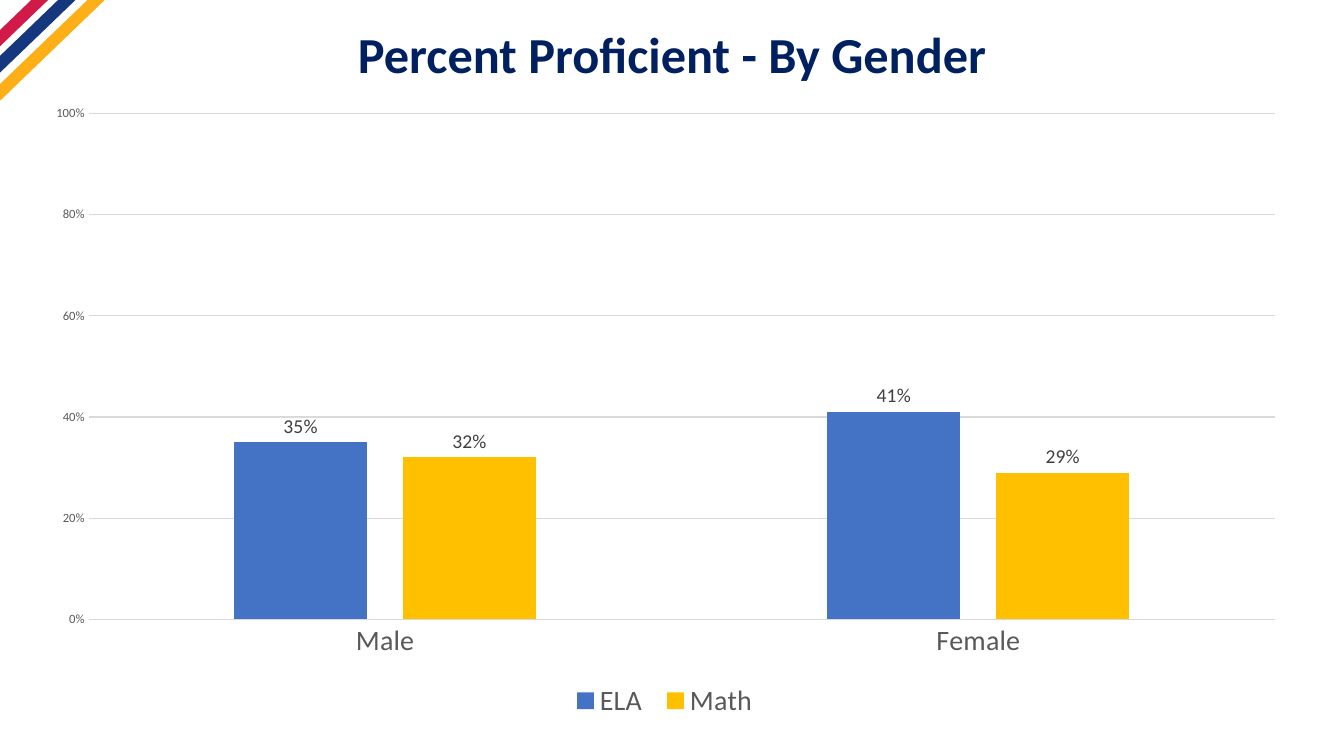
from dataclasses import dataclass

from lxml import etree
from pptx import Presentation
from pptx.chart.data import CategoryChartData
from pptx.dml.color import RGBColor
from pptx.enum.chart import XL_CHART_TYPE, XL_LABEL_POSITION, XL_LEGEND_POSITION, XL_TICK_MARK
from pptx.enum.shapes import MSO_SHAPE
from pptx.enum.text import MSO_ANCHOR, PP_ALIGN
from pptx.oxml.ns import qn
from pptx.util import Cm, Pt

STRIPE = MSO_SHAPE.DIAGONAL_STRIPE
COLUMNS = XL_CHART_TYPE.COLUMN_CLUSTERED
OUTSIDE_END = XL_LABEL_POSITION.OUTSIDE_END
BOTTOM = XL_LEGEND_POSITION.BOTTOM
NO_TICK = XL_TICK_MARK.NONE
MIDDLE, CENTER = MSO_ANCHOR.MIDDLE, PP_ALIGN.CENTER
TITLE_ONLY = 5


@dataclass(frozen=True)
class Theme:
    font: str = "Calibri"
    red: str = "D11A47"
    blue: str = "14377D"
    gold: str = "FCAF17"
    title: str = "002060"
    grid: str = "D9D9D9"
    axis_text: str = "595959"
    label_text: str = "404040"
    ela: str = "4472C4"
    math: str = "FFC000"
    title_size: int = 36
    category_size: int = 20
    label_size: int = 14
    value_size: int = 9


THEME = Theme()


def set_font(font, size, color, bold=False):
    values = {"name": THEME.font, "size": Pt(size), "bold": bold}
    for name, value in values.items():
        setattr(font, name, value)
    font.color.rgb = RGBColor.from_string(color)


def set_line(line, color):
    line.color.rgb = RGBColor.from_string(color)
    line.width = Pt(0.75)


def add_corner_stripes(slide, left, top, width, height):
    """Three diagonal stripes, each given as a share of the corner box."""
    stripes = [(0.46, 0.65, THEME.red), (0.72, 0.77, THEME.blue), (1, 0.835, THEME.gold)]
    for share, inner, color in stripes:
        sp = slide.shapes.add_shape(STRIPE, left, top, int(width * share), int(height * share))
        sp.adjustments[0] = inner
        sp.shadow.inherit = False
        sp.fill.solid()
        sp.fill.fore_color.rgb = RGBColor.from_string(color)
        sp.line.fill.background()


def add_title(slide, text, left, top, width, height):
    sp = slide.shapes.title
    for name, value in {"left": left, "top": top, "width": width, "height": height}.items():
        setattr(sp, name, value)
    tf = sp.text_frame
    tf.vertical_anchor = MIDDLE
    tf.word_wrap = True
    p = tf.paragraphs[0]
    p.alignment = CENTER
    p.line_spacing = 0.9
    r = p.add_run()
    r.text = text
    set_font(r.font, THEME.title_size, THEME.title, bold=True)


def place_plot(chart, x, y, w, h):
    """Fix the inner plot area as shares of the chart box."""
    area = chart._chartSpace.chart.plotArea
    for old in area.findall(qn("c:layout")):
        area.remove(old)
    layout = etree.Element(qn("c:layout"))
    manual = etree.SubElement(layout, qn("c:manualLayout"))
    values = {"layoutTarget": "inner", "xMode": "edge", "yMode": "edge",
              "x": x, "y": y, "w": w, "h": h}
    for name, value in values.items():
        etree.SubElement(manual, qn(f"c:{name}")).set("val", str(value))
    area.insert(0, layout)


def add_proficiency_chart(slide, left, top, width, height):
    series = [("ELA ", (0.35, 0.41), THEME.ela), ("Math", (0.32, 0.29), THEME.math)]
    data = CategoryChartData(number_format="0%")
    data.categories = ["Male", "Female"]
    for name, values, _ in series:
        data.add_series(name, values)
    chart = slide.shapes.add_chart(COLUMNS, left, top, width, height, data).chart
    chart.has_title = False
    chart.font.name = THEME.font
    place_plot(chart, 0.046, 0.03, 0.935, 0.804)

    # Columns and their labels
    plot = chart.plots[0]
    for name, value in {"gap_width": 219, "overlap": -27, "vary_by_categories": False}.items():
        setattr(plot, name, value)
    for ser, (_, _, color) in zip(plot.series, series):
        ser.format.fill.solid()
        ser.format.fill.fore_color.rgb = RGBColor.from_string(color)
        labels = ser.data_labels
        formats = {"show_value": True, "position": OUTSIDE_END,
                   "number_format": "0%", "number_format_is_linked": False}
        for name, value in formats.items():
            setattr(labels, name, value)
        set_font(labels.font, THEME.label_size, THEME.label_text)

    # Axes
    cat, val = chart.category_axis, chart.value_axis
    for axis, size in ((cat, THEME.category_size), (val, THEME.value_size)):
        axis.major_tick_mark = axis.minor_tick_mark = NO_TICK
        set_font(axis.tick_labels.font, size, THEME.axis_text)
    set_line(cat.format.line, THEME.grid)
    val.format.line.fill.background()
    scale = {"minimum_scale": 0, "maximum_scale": 1, "major_unit": 0.2,
             "has_major_gridlines": True}
    for name, value in scale.items():
        setattr(val, name, value)
    set_line(val.major_gridlines.format.line, THEME.grid)
    val.tick_labels.number_format = "0%"
    val.tick_labels.number_format_is_linked = False

    # Legend
    chart.has_legend = True
    chart.legend.position = BOTTOM
    chart.legend.include_in_layout = False
    set_font(chart.legend.font, THEME.category_size, THEME.axis_text)


def main():
    prs = Presentation()
    prs.slide_width, prs.slide_height = Cm(33.87), Cm(19.05)
    slide = prs.slides.add_slide(prs.slide_layouts[TITLE_ONLY])
    add_corner_stripes(slide, 0, 0, Cm(2.64), Cm(2.54))
    add_title(slide, "Percent Proficient - By Gender", Cm(2.34), 0, Cm(29.2), Cm(2.9))
    add_proficiency_chart(slide, Cm(0.76), Cm(2.39), Cm(31.98), Cm(15.85))
    prs.save("out.pptx")


if __name__ == "__main__":
    main()
